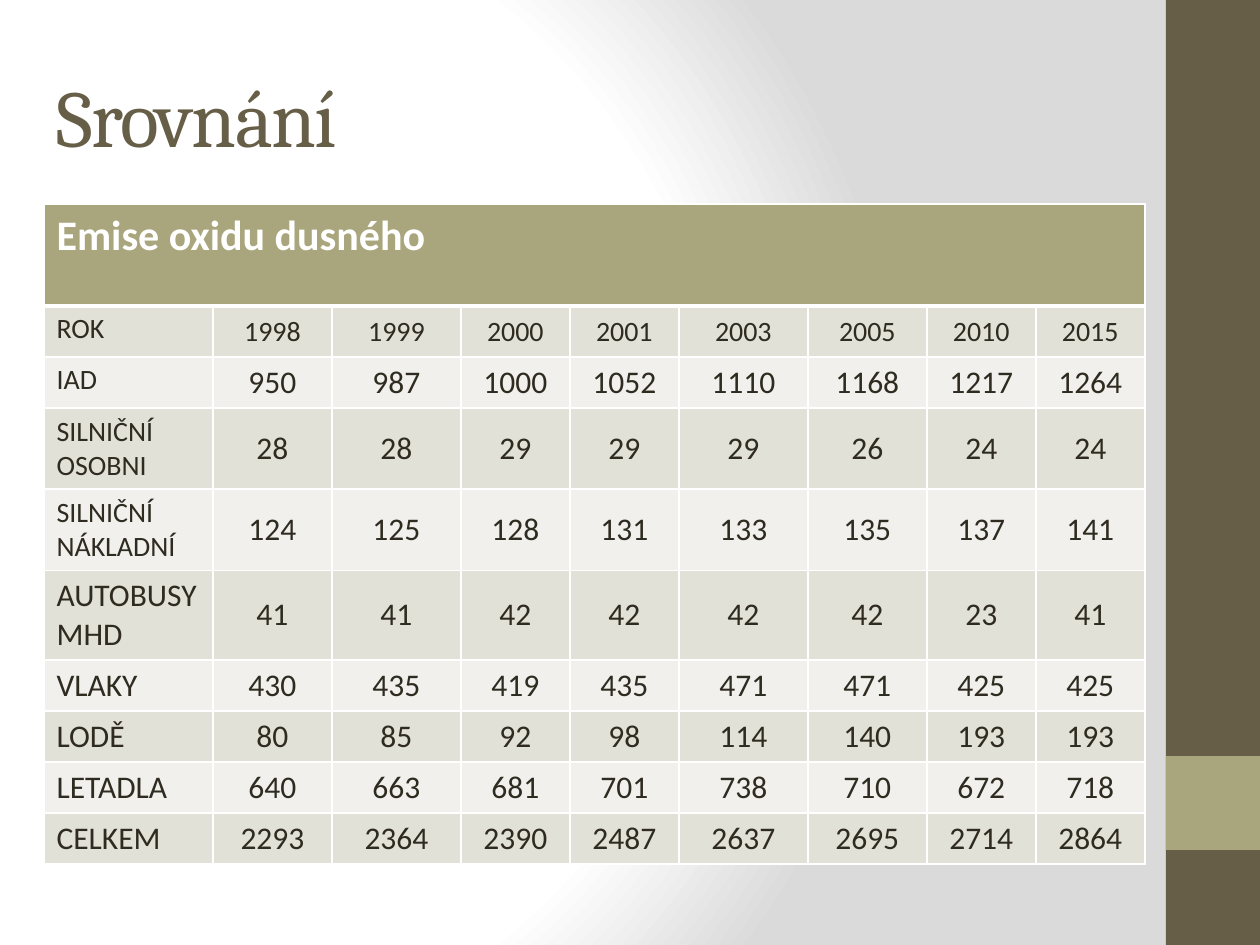
import pptx
import pptx.util
import pptx.dml.color
import pptx.enum.shapes
import pptx.enum.text
import pptx.oxml
import pptx.oxml.ns

PX = 914400 // 126
TITLE = "Srovnání"
HEADING = "Emise oxidu dusného"
# Label, label size, value size, values
ROWS = [
    ("ROK", 16, 16, [1998, 1999, 2000, 2001, 2003, 2005, 2010, 2015]),
    ("IAD", 16, 18, [950, 987, 1000, 1052, 1110, 1168, 1217, 1264]),
    ("SILNIČNÍ OSOBNI", 16, 18, [28, 28, 29, 29, 29, 26, 24, 24]),
    ("SILNIČNÍ NÁKLADNÍ", 16, 18, [124, 125, 128, 131, 133, 135, 137, 141]),
    ("AUTOBUSY MHD", 18, 18, [41, 41, 42, 42, 42, 42, 23, 41]),
    ("VLAKY", 18, 18, [430, 435, 419, 435, 471, 471, 425, 425]),
    ("LODĚ", 18, 18, [80, 85, 92, 98, 114, 140, 193, 193]),
    ("LETADLA", 18, 18, [640, 663, 681, 701, 738, 710, 672, 718]),
    ("CELKEM", 18, 18, [2293, 2364, 2390, 2487, 2637, 2695, 2714, 2864]),
]
COL_WIDTHS = [169, 119, 129, 109, 109, 129, 119, 109, 109]
HEADING_HEIGHT, ROW_HEIGHT, TABLE_HEIGHT = 102, 51, 656
BROWN, KHAKI, INK, WHITE = "675E47", "A9A57C", "2F2B20", "FFFFFF"
BANDS = ["E2E1D7", "F1F0EC"]
GRADIENT = [(0, WHITE), (75, WHITE), (100, "DADADA")]
SIDE_BARS = [(0, 945, BROWN), (756, 94, KHAKI)]  # top, height, colour
NS = pptx.oxml.ns.nsdecls("a")


def px(n):
    return pptx.util.Emu(n * PX)


def rgb(color):
    return pptx.dml.color.RGBColor.from_string(color)


def style(p, font, size, color, bold=False):
    for r in p.runs:
        r.font.name = font
        r.font.size = pptx.util.Pt(size)
        r.font.color.rgb = rgb(color)
        r.font.bold = bold


def set_borders(cell, **widths):
    tcPr = cell._tc.get_or_add_tcPr()
    for i, side in enumerate("LRTB"):
        width = pptx.util.Pt(widths.get(side, 1))
        tcPr.insert(i, pptx.oxml.parse_xml(
            f'<a:ln{side} {NS} w="{width}"><a:solidFill><a:srgbClr val="{WHITE}"/>'
            f'</a:solidFill></a:ln{side}>'))


def fill_cell(cell, text, size, color, fill, bold=False):
    cell.text = str(text)
    cell.fill.solid()
    cell.fill.fore_color.rgb = rgb(fill)
    style(cell.text_frame.paragraphs[0], "Calibri", size, color, bold)


prs = pptx.Presentation()
prs.slide_width, prs.slide_height = px(1260), px(945)
s = prs.slides.add_slide(prs.slide_layouts[5])

# Background gradient
s.background.fill.solid()
solid = s.element.xpath("p:cSld/p:bg/p:bgPr/a:solidFill")[0]
stops = "".join(f'<a:gs pos="{pos * 1000}"><a:srgbClr val="{color}"/></a:gs>'
                for pos, color in GRADIENT)
solid.getparent().replace(solid, pptx.oxml.parse_xml(
    f'<a:gradFill {NS} rotWithShape="1"><a:gsLst>{stops}</a:gsLst><a:path path="circle">'
    '<a:fillToRect l="20000" t="50000" r="100000" b="50000"/></a:path></a:gradFill>'))

# Side bars
for top, height, color in SIDE_BARS:
    bar = s.shapes.add_shape(pptx.enum.shapes.MSO_SHAPE.RECTANGLE,
                             px(1166), px(top), px(94), px(height))
    bar.shadow.inherit = False
    bar.fill.solid()
    bar.fill.fore_color.rgb = rgb(color)
    bar.line.fill.background()

# Title
title = s.shapes.title
title.left, title.top, title.width, title.height = px(44), px(37), px(1050), px(157)
tf = title.text_frame
tf.text = TITLE
tf.vertical_anchor = pptx.enum.text.MSO_ANCHOR.MIDDLE
p = tf.paragraphs[0]
p.alignment = pptx.enum.text.PP_ALIGN.LEFT
style(p, "Cambria", 46, BROWN)
p.runs[0].font._element.set("spc", "-100")

# Table
frame = s.shapes.add_table(len(ROWS) + 1, len(COL_WIDTHS), px(44), px(204),
                           px(sum(COL_WIDTHS)), px(TABLE_HEIGHT))
table = frame.table
table.first_row = table.horz_banding = False
for column, width in zip(table.columns, COL_WIDTHS):
    column.width = px(width)
for i, row in enumerate(table.rows):
    row.height = px(ROW_HEIGHT if i else HEADING_HEIGHT)
frame.height = px(TABLE_HEIGHT)

# Heading row
table.cell(0, 0).merge(table.cell(0, len(COL_WIDTHS) - 1))
fill_cell(table.cell(0, 0), HEADING, 24, WHITE, KHAKI, bold=True)
for cell in table.rows[0].cells:
    set_borders(cell, B=3)

# Data rows
for i, (label, label_size, value_size, values) in enumerate(ROWS):
    for j, text in enumerate([label] + values):
        cell = table.cell(i + 1, j)
        fill_cell(cell, text, value_size if j else label_size, INK, BANDS[i % 2])
        set_borders(cell, T=1 if i else 3)
        if j:
            cell.vertical_anchor = pptx.enum.text.MSO_ANCHOR.MIDDLE
            cell.text_frame.paragraphs[0].alignment = pptx.enum.text.PP_ALIGN.CENTER

prs.save("out.pptx")
